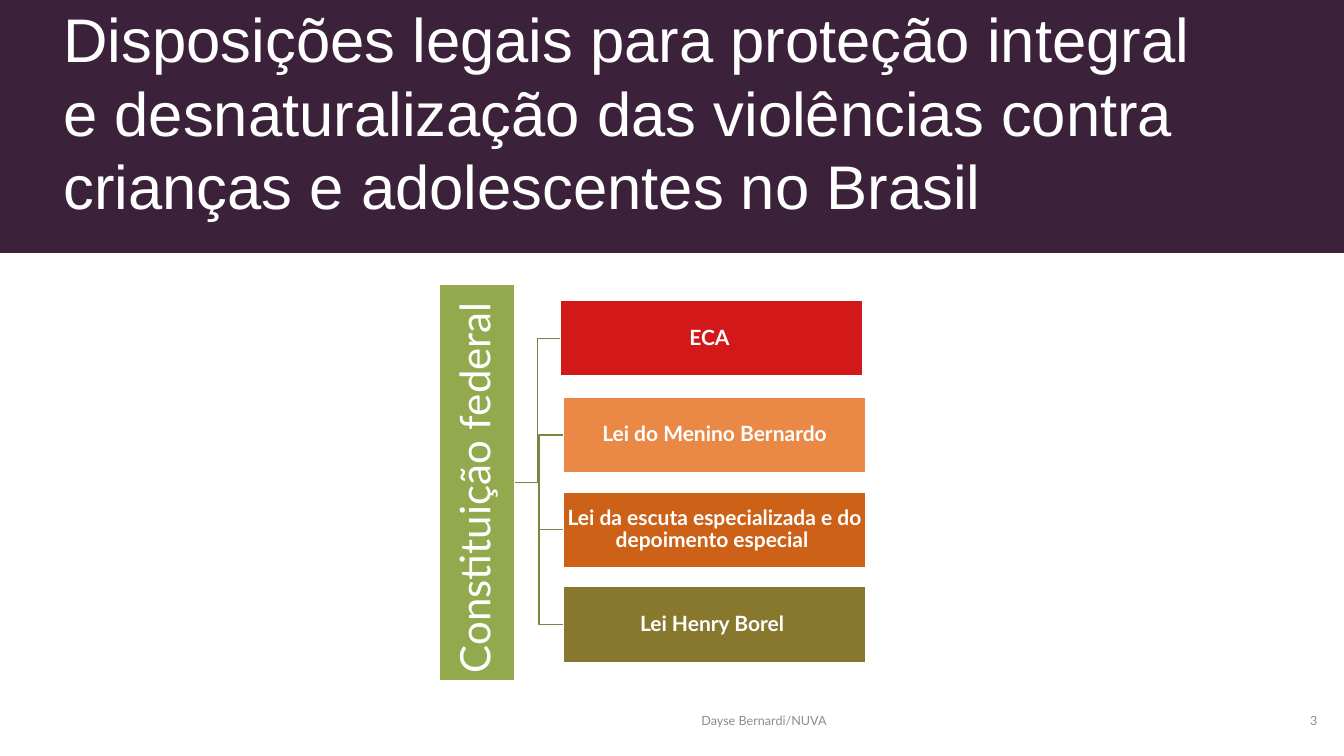
import pptx
import pptx.util
import pptx.dml.color
import pptx.enum.shapes
import pptx.enum.text

Pt = pptx.util.Pt
ALIGN = pptx.enum.text.PP_ALIGN
ANCHOR = pptx.enum.text.MSO_ANCHOR

COLOURS = {
    "band": "3B213A", "white": "FFFFFF", "branch": "76873E", "constitution": "93A94E",
    "red": "D31819", "orange": "EA8946", "rust": "CD6117", "olive": "88782D", "grey": "8C8C8C",
}
TITLE = ("Disposições legais para proteção integral e desnaturalização das violências "
         "contra crianças e adolescentes no Brasil")
CONSTITUTION = "Constituição federal "
FIRST_LAW = ("ECA ", "red")
OTHER_LAWS = [
    ("Lei do Menino Bernardo", "orange"),
    ("Lei da escuta especializada e do depoimento especial ", "rust"),
    ("Lei Henry Borel ", "olive"),
]
AUTHOR = "Dayse Bernardi/NUVA"
PAGE = "3"

SLIDE_W, SLIDE_H = 960, 540
BAND_H = 180.7
BOX_W, BOX_H = 216, 54
FIRST_LEFT, FIRST_TOP = 400.3, 214.6
LAW_LEFT, LAW_TOP, LAW_PITCH = 402.5, 283.7, 67.7
ROOT_LENGTH, ROOT_LEFT, ROOT_MIDDLE = 283.7, 313.6, 344.6
FOOTER_TOP, FOOTER_H = 500.4, 28.8


def rgb(name):
    return pptx.dml.color.RGBColor.from_string(COLOURS[name])


def write(shape, text, size, colour="white", font="Lato", bold=False, align=ALIGN.LEFT,
          anchor=ANCHOR.MIDDLE, spacing=None, inset=None):
    frame = shape.text_frame
    frame.word_wrap = True
    frame.vertical_anchor = anchor
    if inset is not None:
        frame.margin_left = frame.margin_right = Pt(inset)
        frame.margin_top = frame.margin_bottom = Pt(inset)
    frame.text = text
    paragraph = frame.paragraphs[0]
    paragraph.alignment = align
    paragraph.line_spacing = spacing
    style = paragraph.runs[0].font
    style.name, style.size, style.bold = font, Pt(size), bold
    style.color.rgb = rgb(colour)


def add_box(slide, left, top, width, height, fill, outline=True):
    box = slide.shapes.add_shape(pptx.enum.shapes.MSO_SHAPE.RECTANGLE,
                                 Pt(left), Pt(top), Pt(width), Pt(height))
    box.shadow.inherit = False
    box.fill.solid()
    box.fill.fore_color.rgb = rgb(fill)
    if outline:
        box.line.color.rgb = rgb("white")
        box.line.width = Pt(1)
    else:
        box.line.fill.background()
    return box


def add_text(slide, left, top, width, height, text, size, **style):
    box = slide.shapes.add_textbox(Pt(left), Pt(top), Pt(width), Pt(height))
    write(box, text, size, **style)


def add_branch(slide, left, top):
    start = ROOT_LEFT + BOX_H
    bend = (start + left) / 2
    middle = top + BOX_H / 2
    outline = slide.shapes.build_freeform(Pt(start), Pt(ROOT_MIDDLE))
    outline.add_line_segments([(Pt(bend), Pt(ROOT_MIDDLE)), (Pt(bend), Pt(middle)),
                               (Pt(left), Pt(middle))], close=False)
    branch = outline.convert_to_shape()
    branch.shadow.inherit = False
    branch.fill.background()
    branch.line.color.rgb = rgb("branch")
    branch.line.width = Pt(1)


def main():
    """Build the slide on the legal provisions and save it."""
    deck = pptx.Presentation()
    deck.slide_width, deck.slide_height = Pt(SLIDE_W), Pt(SLIDE_H)
    slide = deck.slides.add_slide(deck.slide_layouts[6])

    add_box(slide, 0, 0, SLIDE_W, BAND_H, "band", outline=False)
    add_text(slide, 38.2, 28.8, 856, 133.2, TITLE, 44, font="Arial",
             anchor=ANCHOR.BOTTOM, spacing=Pt(52.4))

    laws = [(*FIRST_LAW, FIRST_LEFT, FIRST_TOP)]
    laws += [(text, colour, LAW_LEFT, LAW_TOP + row * LAW_PITCH)
             for row, (text, colour) in enumerate(OTHER_LAWS)]
    for text, colour, left, top in reversed(laws):
        add_branch(slide, left, top)

    root = add_box(slide, ROOT_LEFT + (BOX_H - ROOT_LENGTH) / 2, ROOT_MIDDLE - BOX_H / 2,
                   ROOT_LENGTH, BOX_H, "constitution")
    root.rotation = 270
    write(root, CONSTITUTION, 30, align=ALIGN.CENTER, spacing=0.9, inset=1.5)
    for text, colour, left, top in laws:
        law = add_box(slide, left, top, BOX_W, BOX_H, colour)
        write(law, text, 15, bold=True, align=ALIGN.CENTER, spacing=0.9, inset=0.75)

    add_text(slide, 493.9, FOOTER_TOP, 324, FOOTER_H, AUTHOR, 9, colour="grey")
    add_text(slide, 847.4, FOOTER_TOP, 100.8, FOOTER_H, PAGE, 9, colour="grey",
             align=ALIGN.RIGHT)
    deck.save("out.pptx")


if __name__ == "__main__":
    main()
